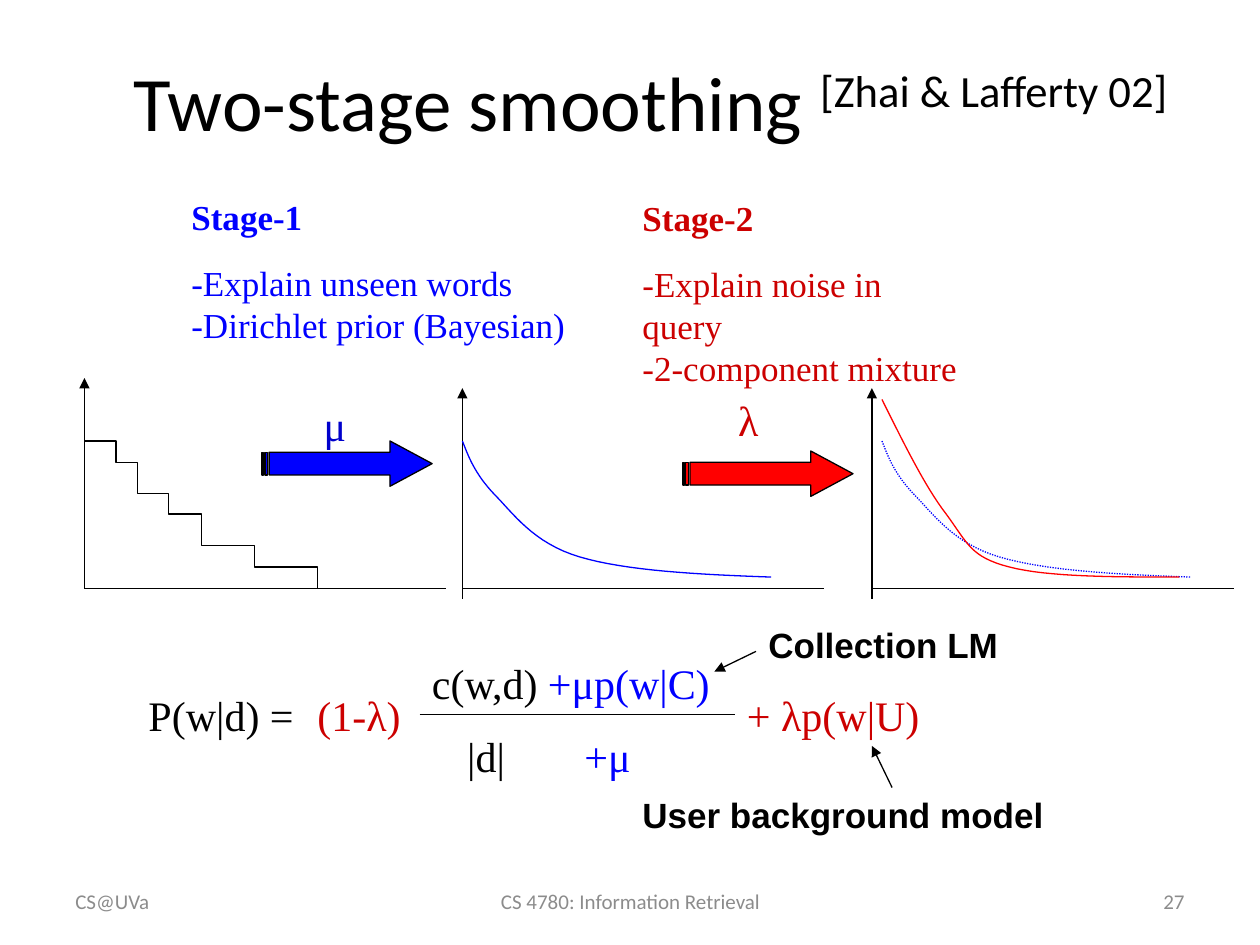
import pptx
import pptx.dml.color
import pptx.enum.dml
import pptx.enum.shapes
import pptx.enum.text
import pptx.oxml
import pptx.oxml.ns
import pptx.util

Inches = pptx.util.Inches
Pt = pptx.util.Pt
ALIGN = pptx.enum.text.PP_ALIGN
ANCHOR = pptx.enum.text.MSO_ANCHOR
FIT = pptx.enum.text.MSO_AUTO_SIZE
BLACK, GREY = "000000", "8C8C8C"
BLUE, DARK_BLUE = "0000FF", "0000CC"
RED, DARK_RED = "FF0000", "CC0000"


def color(value):
    return pptx.dml.color.RGBColor.from_string(value)


def add_span(para, text, size=24, font="Times New Roman", ink=BLACK, bold=False, raised=0):
    span = para.add_run()
    span.text = text
    span.font.size = Pt(size)
    span.font.name = font
    span.font.bold = bold
    span.font.color.rgb = color(ink)
    if raised:
        span.font._element.set("baseline", str(raised * 1000))
    return span


def bezier_points(start, segments, steps=16):
    points = [start]
    for first, second, end in segments:
        for step in range(1, steps + 1):
            t = step / steps
            weights = ((1 - t) ** 3, 3 * t * (1 - t) ** 2, 3 * t * t * (1 - t), t ** 3)
            corners = (start, first, second, end)
            points.append(tuple(sum(w * c[axis] for w, c in zip(weights, corners)) for axis in (0, 1)))
        start = end
    return points


class SlideBuilder:
    def __init__(self, page, line_width=0.75):
        self.page = page
        self.line_width = Pt(line_width)

    def text_box(self, left, top, width, height, wrap=False, middle=False):
        box = self.page.shapes.add_textbox(Inches(left), Inches(top), Inches(width), Inches(height))
        frame = box.text_frame
        frame.word_wrap = wrap
        frame.auto_size = FIT.NONE if middle else FIT.SHAPE_TO_FIT_TEXT
        frame.vertical_anchor = ANCHOR.MIDDLE if middle else ANCHOR.TOP
        return box

    def label(self, text, place, align=ALIGN.LEFT, wrap=False, middle=False, **style):
        box = self.text_box(*place, wrap=wrap, middle=middle)
        para = box.text_frame.paragraphs[0]
        para.alignment = align
        add_span(para, text, **style)
        return box

    def stage(self, heading, points, place, ink, wrap=False):
        box = self.label(heading, place, wrap=wrap, size=20, ink=ink, bold=True)
        for index, point in enumerate(points):
            para = box.text_frame.add_paragraph()
            para.space_before = Pt(0 if index else 14)
            add_span(para, point, size=20, ink=ink)

    def line(self, start, end, arrow=False):
        link = self.page.shapes.add_connector(
            pptx.enum.shapes.MSO_CONNECTOR.STRAIGHT, *(Inches(value) for value in start + end))
        link.line.width = self.line_width
        link.line.color.rgb = color(BLACK)
        if arrow:
            head = pptx.oxml.parse_xml(f'<a:tailEnd {pptx.oxml.ns.nsdecls("a")} type="triangle"/>')
            link.line._get_or_add_ln().append(head)
        link._element.spPr.append(pptx.oxml.parse_xml(f'<a:effectLst {pptx.oxml.ns.nsdecls("a")}/>'))
        return link

    def axes(self, left, top, bottom, base=4.67):
        self.line((left, base), (left + 2.87, base))
        self.line((left, bottom), (left, top), arrow=True)

    def curve(self, points, ink, dotted=False):
        places = [(Inches(x), Inches(y)) for x, y in points]
        builder = self.page.shapes.build_freeform(*places[0])
        builder.add_line_segments(places[1:], close=False)
        shape = builder.convert_to_shape()
        shape.shadow.inherit = False
        shape.fill.background()
        shape.line.width = self.line_width
        shape.line.color.rgb = color(ink)
        if dotted:
            shape.line.dash_style = pptx.enum.dml.MSO_LINE.ROUND_DOT

    def striped_arrow(self, left, top, fill):
        shape = self.page.shapes.add_shape(
            pptx.enum.shapes.MSO_SHAPE.STRIPED_RIGHT_ARROW,
            Inches(left), Inches(top), Inches(1.35), Inches(0.36))
        shape.adjustments[0] = 0.5
        shape.adjustments[1] = 0.93
        shape.shadow.inherit = False
        shape.fill.solid()
        shape.fill.fore_color.rgb = color(fill)
        shape.line.width = self.line_width
        shape.line.color.rgb = color(BLACK)


def staircase():
    drops = [(0.92, 3.67), (1.09, 3.92), (1.34, 4.08), (1.6, 4.33), (2.02, 4.5), (2.52, 4.67)]
    points, level = [(0.67, 3.5)], 3.5
    for x, lower in drops:
        points += [(x, level), (x, lower)]
        level = lower
    return points + [(2.95, level)]


def smooth_decay(left):
    segments = [
        ((0.05, 3.63), (0.1, 3.76), (0.25, 3.92)),
        ((0.4, 4.07), (0.56, 4.31), (0.93, 4.42)),
        ((1.3, 4.53), (1.87, 4.56), (2.45, 4.58)),
    ]
    return [(left + x, y) for x, y in bezier_points((0, 3.5), segments)]


def main():
    deck = pptx.Presentation()
    deck.slide_width, deck.slide_height = Inches(10), Inches(7.5)
    page = deck.slides.add_slide(deck.slide_layouts[6])
    slide = SlideBuilder(page)

    title = slide.label("Two-stage smoothing ", (0.75, 0.17, 8.83, 1.25), align=ALIGN.CENTER,
                        wrap=True, middle=True, size=44, font="Calibri")
    add_span(title.text_frame.paragraphs[0], "[Zhai & Lafferty 02]", size=44, font="Calibri", raised=30)

    slide.stage("Stage-1", ["-Explain unseen words", "-Dirichlet prior (Bayesian)"],
                (1.42, 1.5, 3.19, 1.31), BLUE)
    slide.stage("Stage-2", ["-Explain noise in query", "-2-component mixture"],
                (5, 1.51, 2.75, 1.3), DARK_RED, wrap=True)

    slide.axes(0.67, 3, 4.67)
    slide.curve(staircase(), BLACK)
    slide.axes(3.67, 3.08, 4.75)
    slide.curve(smooth_decay(3.67), BLUE)
    slide.axes(6.92, 3.08, 4.75)
    slide.curve(smooth_decay(7), BLUE, dotted=True)
    slide.curve(bezier_points((7, 3.17), [
        ((7.17, 3.51), (7.34, 3.86), (7.51, 4.08)),
        ((7.68, 4.31), (7.7, 4.42), (8.01, 4.5)),
        ((8.32, 4.58), (8.84, 4.58), (9.36, 4.58)),
    ]), RED)

    slide.striped_arrow(2.08, 3.5, BLUE)
    slide.label("μ", (2.47, 3.12, 0.39, 0.5), ink=DARK_BLUE)
    slide.striped_arrow(5.42, 3.58, RED)
    slide.label("λ", (5.76, 3.08, 0.38, 0.5), ink=DARK_RED)

    slide.label("P(w|d) =", (1.08, 5.42, 1.35, 0.5))
    slide.label("(1-λ)", (2.42, 5.42, 0.88, 0.5), ink=DARK_RED)
    slide.label("c(w,d)", (3.33, 5.17, 1.06, 0.5))
    slide.label("+μp(w|C)", (4.25, 5.17, 1.5, 0.5), ink=BLUE)
    slide.label("|d|", (3.61, 5.75, 0.5, 0.5))
    slide.label("+μ", (4.54, 5.75, 0.58, 0.5), ink=BLUE)
    user_term = slide.label("+ λp(w|U)", (5.83, 5.42, 1.59, 0.5), ink=DARK_RED)
    fraction_bar = slide.line((3.33, 5.67), (5.83, 5.67))
    fraction_bar.end_connect(user_term, 1)

    note = {"size": 20, "font": "Arial", "bold": True}
    slide.label("Collection LM", (6, 4.9, 2.1, 0.43), **note)
    slide.line((6, 5.17), (5.67, 5.33), arrow=True)
    slide.label("User background model", (5, 6.25, 4.5, 0.44), wrap=True, **note)
    slide.line((7.08, 6.25), (6.92, 5.92), arrow=True)

    footers = [
        ("CS@UVa", 0.5, 2.33, ALIGN.LEFT),
        ("CS 4780: Information Retrieval", 3.42, 3.17, ALIGN.CENTER),
        ("27", 7.17, 2.33, ALIGN.RIGHT),
    ]
    for text, left, width, align in footers:
        slide.label(text, (left, 6.95, width, 0.4), align=align, wrap=True, middle=True,
                    size=12, font="Calibri", ink=GREY)

    deck.save("out.pptx")


if __name__ == "__main__":
    main()
